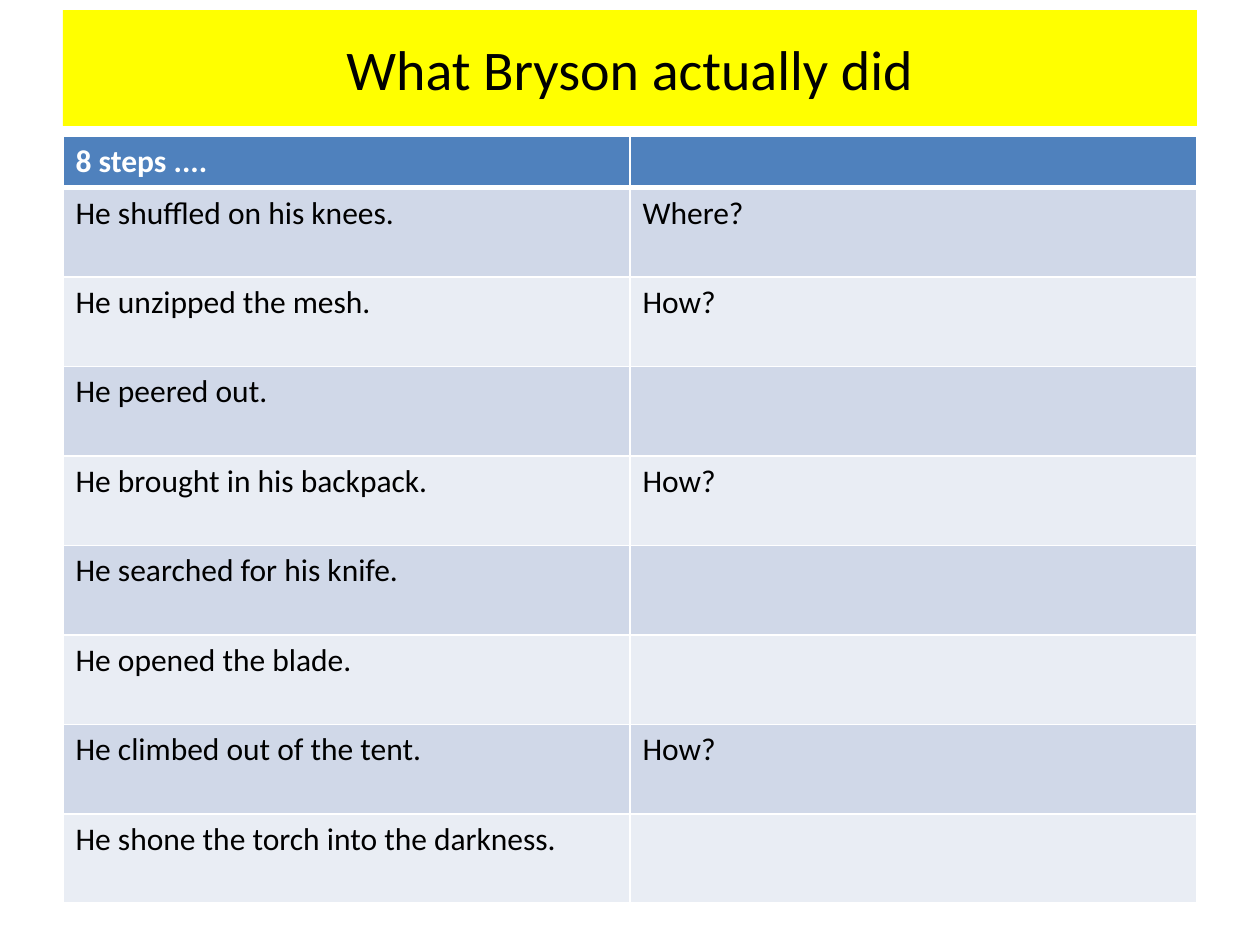
from pptx import Presentation
from pptx.dml.color import RGBColor
from pptx.enum.text import MSO_ANCHOR, PP_ALIGN
from pptx.oxml import parse_xml
from pptx.oxml.ns import nsdecls
from pptx.util import Inches, Pt

COLOURS = {
    "title": "FFFF00",
    "header": "4F81BD",
    "odd": "D0D8E8",
    "even": "E9EDF4",
    "white": "FFFFFF",
    "black": "000000",
}
FONT = "Calibri"
WIDTH, HEIGHT = 10, 7.5
MARGIN = WIDTH * 0.05
CONTENT_WIDTH = WIDTH - 2 * MARGIN
TABLE_TOP = 1.08
HEADER_HEIGHT, STEP_HEIGHT = 0.41, 0.71

ROWS = [
    ("8 steps ....", ""),
    ("He shuffled on his knees.", "Where?"),
    ("He unzipped the mesh.", "How?"),
    ("He peered out.", ""),
    ("He brought in his backpack.", "How?"),
    ("He searched for his knife.", ""),
    ("He opened the blade.", ""),
    ("He climbed out of the tent.", "How?"),
    ("He shone the torch into the darkness.", ""),
]


def colour(name):
    return RGBColor.from_string(COLOURS[name])


def write(frame, text, size, ink, bold=False):
    paragraph = frame.paragraphs[0]
    paragraph.text = text
    font = paragraph.font
    font.name, font.size, font.bold = FONT, Pt(size), bold
    font.color.rgb = colour(ink)
    return paragraph


def add_title(page, text):
    box = page.shapes.add_textbox(
        Inches(MARGIN), Inches(0.08), Inches(CONTENT_WIDTH), Inches(0.92))
    box.fill.solid()
    box.fill.fore_color.rgb = colour("title")
    frame = box.text_frame
    frame.word_wrap = True
    frame.vertical_anchor = MSO_ANCHOR.MIDDLE
    write(frame, text, 32, "black").alignment = PP_ALIGN.CENTER


def set_borders(cell, top, bottom):
    properties = cell._tc.get_or_add_tcPr()
    # Borders must come before the fill, in this order
    widths = {"lnL": 1, "lnR": 1, "lnT": top, "lnB": bottom}
    for position, (tag, width) in enumerate(widths.items()):
        properties.insert(position, parse_xml(
            f'<a:{tag} {nsdecls("a")} w="{Pt(width)}"><a:solidFill>'
            f'<a:srgbClr val="{COLOURS["white"]}"/></a:solidFill></a:{tag}>'))


def add_step_table(page, rows):
    columns = len(rows[0])
    height = HEADER_HEIGHT + STEP_HEIGHT * (len(rows) - 1)
    table = page.shapes.add_table(
        len(rows), columns, Inches(MARGIN), Inches(TABLE_TOP),
        Inches(CONTENT_WIDTH), Inches(height)).table
    for row, texts in enumerate(rows):
        header = row == 0
        table.rows[row].height = Inches(HEADER_HEIGHT if header else STEP_HEIGHT)
        band = "header" if header else "odd" if row % 2 else "even"
        for column, text in enumerate(texts):
            cell = table.cell(row, column)
            cell.fill.solid()
            cell.fill.fore_color.rgb = colour(band)
            write(cell.text_frame, text, 18, "white" if header else "black", header)
            # A thick rule separates the header from the steps
            set_borders(cell, top=3 if row == 1 else 1, bottom=3 if header else 1)


def main():
    deck = Presentation()
    deck.slide_width, deck.slide_height = Inches(WIDTH), Inches(HEIGHT)
    page = deck.slides.add_slide(deck.slide_layouts[6])
    add_title(page, "What Bryson actually did")
    add_step_table(page, ROWS)
    deck.save("out.pptx")


if __name__ == "__main__":
    main()
